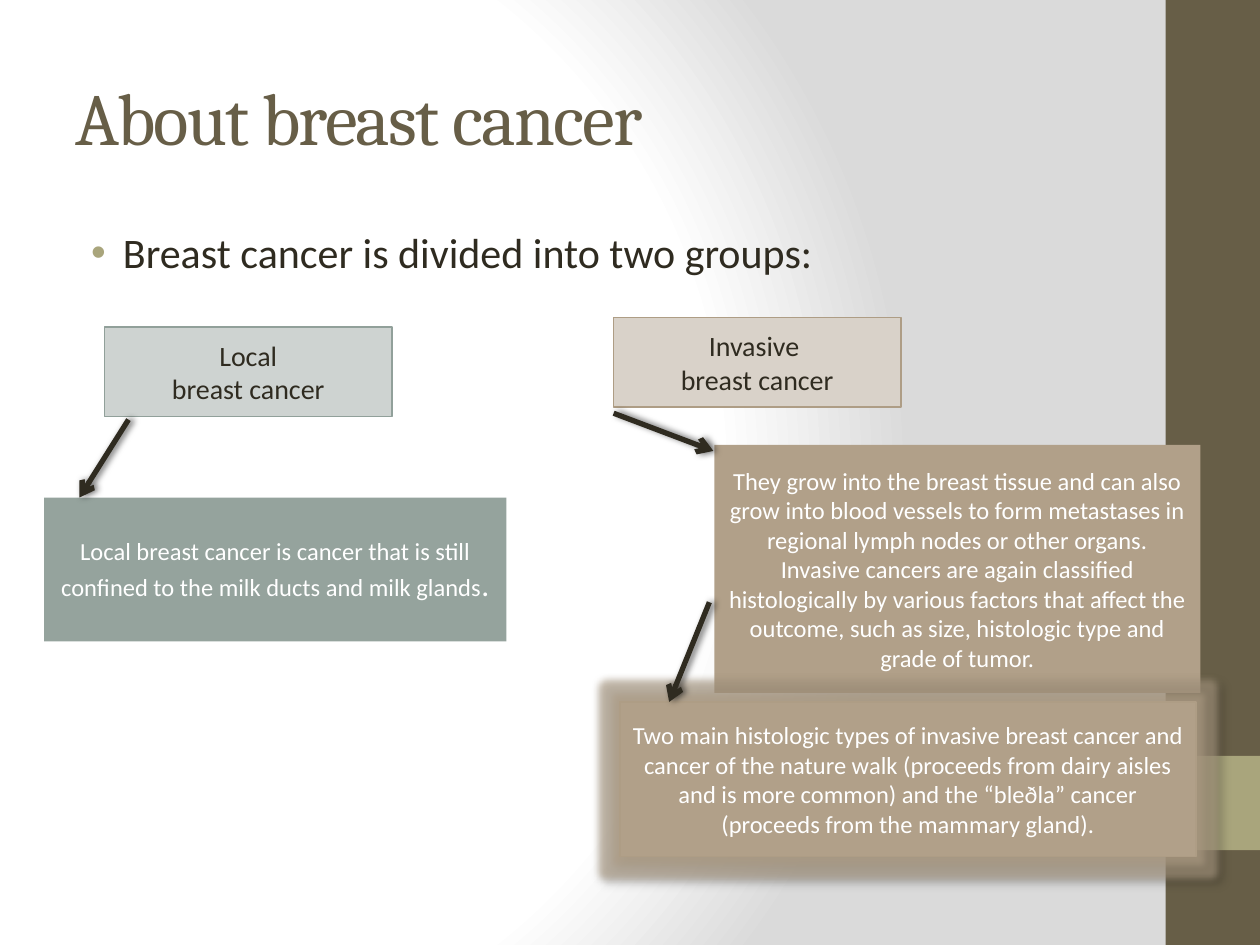
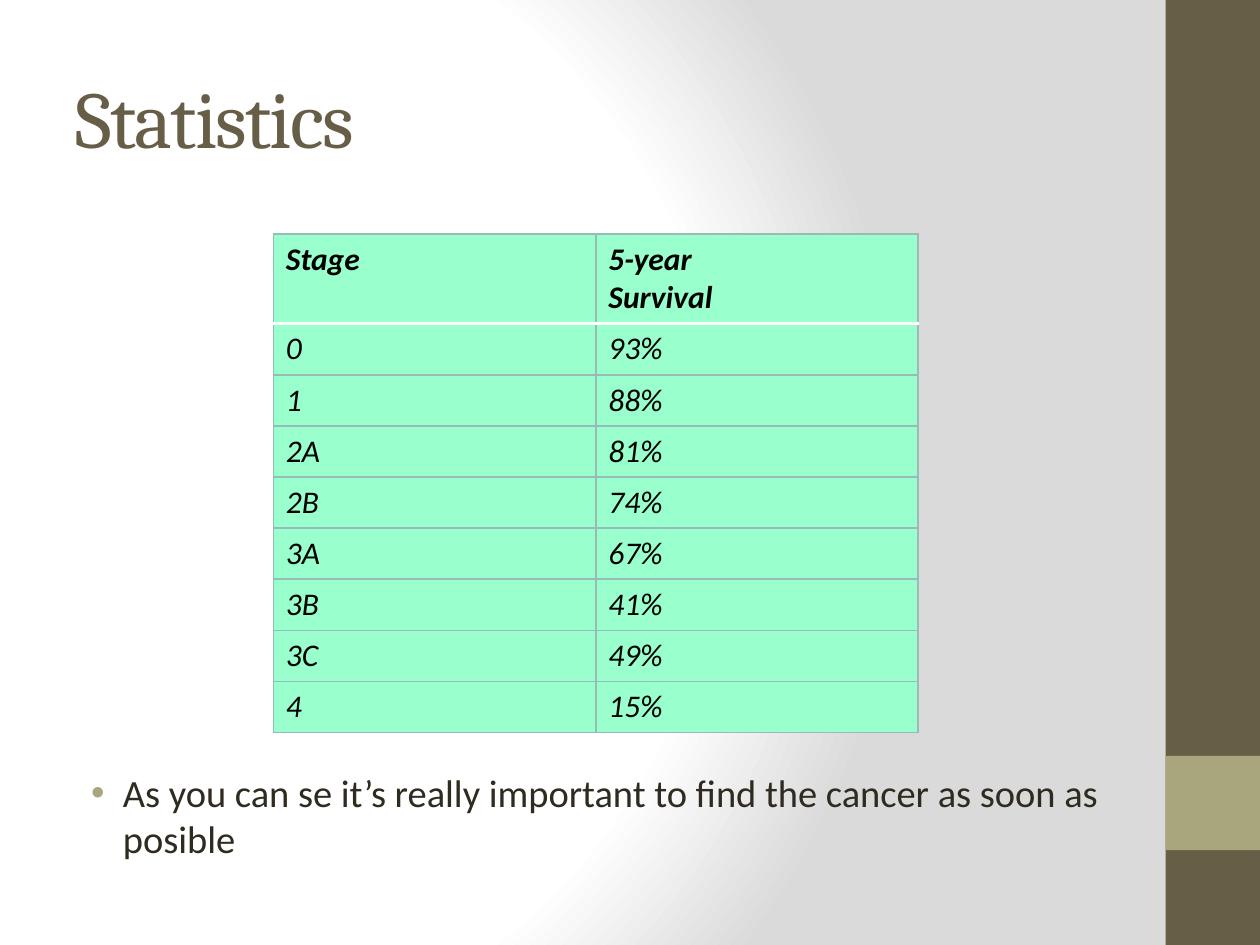
from lxml.etree import SubElement
from pptx import Presentation
from pptx.dml.color import RGBColor
from pptx.enum.shapes import MSO_CONNECTOR, MSO_SHAPE
from pptx.enum.text import MSO_ANCHOR as Anchor, MSO_AUTO_SIZE, PP_ALIGN as Align
from pptx.oxml import parse_xml
from pptx.oxml.ns import nsdecls, qn
from pptx.util import Cm, Pt

BROWN, OLIVE, INK, WHITE = "675E47", "A9A57C", "2F2B20", "FFFFFF"
SAGE, PALE_SAGE, SAGE_LINE = "95A39D", "CED3D1", "91A09A"
TAN, PALE_TAN, TAN_LINE = "B1A089", "D9D2C9", "AE9D85"
MINT, TABLE_LINE = "99FFCC", "98BBBA"
TITLE_FONT, BODY_FONT = "Cambria", "Calibri"
LABEL_SIZE = (5.79, 1.8)
SURVIVAL = [("Stage", "5-year\nSurvival"), ("0", "93%"), ("1", "88%"),
            ("2A", "81%"), ("2B", "74%"), ("3A", "67%"), ("3B", "41%"),
            ("3C", "49%"), ("4", "15%")]


def rgb(value):
    """Turn a hex string into a colour."""
    return RGBColor.from_string(value)


def child(parent, tag, **attributes):
    """Add a drawing element with the given attributes."""
    return SubElement(parent, qn(f"a:{tag}"),
                      {name: str(value) for name, value in attributes.items()})


def tint(parent, color, alpha=100):
    """Add a colour with an opacity in percent."""
    child(child(parent, "srgbClr", val=color), "alpha", val=alpha * 1000)


def write(para, text, size=14, color=INK, font=BODY_FONT, align=Align.LEFT,
          bold=False, italic=False, tracking=0):
    """Append text to a paragraph, with a line break at each newline."""
    para.alignment = align
    for index, line in enumerate(text.split("\n")):
        if index:
            para.add_line_break()
        span = para.add_run()
        span.text = line
        span.font.size, span.font.name = Pt(size), font
        span.font.bold, span.font.italic = bold, italic
        span.font.color.rgb = rgb(color)
        if tracking:
            span.font._element.set("spc", str(tracking * 100))


def add_effects(shape, alpha, distance, angle, glow=None):
    """Give a shape a soft black shadow and, if asked, a glow."""
    properties = shape._element.spPr
    for old in properties.findall(qn("a:effectLst")):
        properties.remove(old)
    effects = child(properties, "effectLst")
    if glow:
        tint(child(effects, "glow", rad=Pt(8)), glow, 60)
    shadow = child(effects, "outerShdw", blurRad=Pt(4), dist=Pt(distance),
                   dir=angle * 60000, algn="ctr", rotWithShape=0)
    tint(shadow, "000000", alpha)


def add_box(page, box, fill, line=None):
    """Add a flat rectangle, outlined if a line colour is given."""
    shape = page.shapes.add_shape(MSO_SHAPE.RECTANGLE, *map(Cm, box))
    shape.shadow.inherit = False
    shape.fill.solid()
    shape.fill.fore_color.rgb = rgb(fill)
    if line:
        shape.line.color.rgb = rgb(line)
        shape.line.width = Pt(1)
    else:
        shape.line.fill.background()
    return shape


def add_card(page, box, paragraphs, fill, line=None, size=14, color=WHITE):
    """Add a rectangle with centred paragraphs."""
    shape = add_box(page, box, fill, line)
    frame = shape.text_frame
    frame.word_wrap, frame.vertical_anchor = True, Anchor.MIDDLE
    for index, text in enumerate(paragraphs):
        para = frame.add_paragraph() if index else frame.paragraphs[0]
        write(para, text, size=size, color=color, align=Align.CENTER)
    return shape


def add_label(page, left, top, paragraphs, fill, line):
    """Add the heading card of a cancer group."""
    add_card(page, (left, top, *LABEL_SIZE), paragraphs, fill, line, 16, INK)


def add_arrow(page, left, top, start, end):
    """Add an arrow between two points measured from a corner."""
    points = (left + start[0], top + start[1], left + end[0], top + end[1])
    arrow = page.shapes.add_connector(MSO_CONNECTOR.STRAIGHT, *map(Cm, points))
    arrow.line.color.rgb = rgb(INK)
    arrow.line.width = Pt(3)
    child(arrow.line._get_or_add_ln(), "tailEnd", type="arrow")
    add_effects(arrow, 60, 2, 0)


def add_bullet(page, box, text, size):
    """Add a bulleted sentence."""
    frame = page.shapes.add_textbox(*map(Cm, box)).text_frame
    frame.word_wrap = True
    para = frame.paragraphs[0]
    write(para, text, size=size)
    properties = para._p.get_or_add_pPr()
    properties.set("marL", str(Cm(0.96)))
    properties.set("indent", str(Cm(-0.64)))
    tint(child(properties, "buClr"), OLIVE)
    child(properties, "buFont", typeface="Arial")
    child(properties, "buChar", char="•")


def set_background(deck):
    """Put the radial white to grey gradient on the master."""
    slide = deck.slide_master.element.cSld
    for old in slide.findall(qn("p:bg")):
        slide.remove(old)
    stops = "".join(f'<a:gs pos="{place}"><a:srgbClr val="{color}"/></a:gs>' for place, color
                    in ((0, WHITE), (75000, WHITE), (100000, "DADADA")))
    slide.insert(0, parse_xml(
        f'<p:bg {nsdecls("p", "a")}><p:bgPr><a:gradFill rotWithShape="1">'
        f'<a:gsLst>{stops}</a:gsLst><a:path path="circle">'
        '<a:fillToRect l="20000" t="50000" r="100000" b="50000"/></a:path>'
        '</a:gradFill><a:effectLst/></p:bgPr></p:bg>'))


def new_page(deck, title, size):
    """Add a page with its side bands and title."""
    page = deck.slides.add_slide(deck.slide_layouts[5])
    add_box(page, (23.5, 0, 1.9, 19.05), BROWN)
    add_box(page, (23.5, 15.24, 1.9, 1.9), OLIVE)
    holder = page.shapes.title
    holder.left, holder.top, holder.width, holder.height = map(Cm, (1.27, 0.76, 21.16, 3.18))
    frame = holder.text_frame
    frame.auto_size, frame.vertical_anchor = MSO_AUTO_SIZE.NONE, Anchor.MIDDLE
    write(frame.paragraphs[0], title, size=size, color=BROWN, font=TITLE_FONT, tracking=-1)
    return page


def add_local_group(page, left, top):
    """Draw the local cancer label and its explanation."""
    add_label(page, left + 1.22, top, ["Local", "breast cancer"], PALE_SAGE, SAGE_LINE)
    card = add_card(page, (left, top + 3.43, 9.32, 2.9),
                    ["Local breast cancer is cancer that is still "
                     "confined to the milk ducts and milk glands"], SAGE)
    write(card.text_frame.paragraphs[0], ".", size=18, color=WHITE, align=Align.CENTER)
    add_arrow(page, left, top, (1.7, 1.86), (0.71, 3.43))


def add_invasive_group(page, left, top):
    """Draw the invasive cancer label and its two explanations."""
    add_label(page, left, top, ["Invasive ", "breast cancer"], PALE_TAN, TAN_LINE)
    add_card(page, (left + 2.03, top + 2.57, 9.8, 5),
             ["They grow into the breast tissue and can also grow into blood vessels "
              "to form metastases in regional lymph nodes or other organs. Invasive "
              "cancers are again classified histologically by various factors that "
              "affect the outcome, such as size, histologic type and grade of tumor."], TAN)
    types = add_card(page, (left + 0.13, top + 7.75, 11.61, 3.12),
                     ["Two main histologic types of invasive breast cancer and cancer of "
                      "the nature walk (proceeds from dairy aisles and is more common) and "
                      "the “bleðla” cancer (proceeds from the mammary gland)."], TAN, TAN_LINE)
    add_effects(types, 40, 3, 45, glow=TAN_LINE)
    add_arrow(page, left, top, (0, 1.93), (2.01, 2.69))
    add_arrow(page, left, top, (1.93, 5.74), (1.12, 7.75))


def set_border(cell, side, color, width):
    """Draw one edge of a table cell."""
    edge = child(cell._tc.get_or_add_tcPr(), f"ln{side}", w=Pt(width))
    tint(child(edge, "solidFill"), color)


def add_survival_table(page, left, top, width):
    """Draw the table of survival by stage."""
    table = page.shapes.add_table(len(SURVIVAL), 2, Cm(left), Cm(top),
                                  Cm(width), Cm(10)).table
    for column in table.columns:
        column.width = Cm(width / 2)
    for row, values in enumerate(SURVIVAL):
        table.rows[row].height = Cm(1.03 if row else 1.79)
        for column, text in enumerate(values):
            cell = table.cell(row, column)
            for side in "LRTB":
                divider = (row, side) in ((0, "B"), (1, "T"))
                set_border(cell, side, *((WHITE, 2) if divider else (TABLE_LINE, 1)))
            cell.fill.solid()
            cell.fill.fore_color.rgb = rgb(MINT)
            write(cell.text_frame.paragraphs[0], text, size=18, color="000000",
                  bold=row == 0, italic=True)


def build_about(deck):
    """Build the page on the two groups of breast cancer."""
    page = new_page(deck, "About breast cancer", 42)
    add_bullet(page, (1.27, 4.45, 21.16, 1.3), "Breast cancer is divided into two groups:", 24)
    add_local_group(page, 0.89, 6.6)
    add_invasive_group(page, 12.37, 6.4)


def build_statistics(deck):
    """Build the page on survival."""
    page = new_page(deck, "Statistics", 46)
    add_survival_table(page, 5.51, 4.72, 13)
    add_bullet(page, (1.27, 15.37, 21.16, 2.2),
               "As you can se it’s really important to find the cancer as soon as posible", 22)


def main():
    """Build and save the deck."""
    deck = Presentation()
    deck.slide_width, deck.slide_height = Cm(25.4), Cm(19.05)
    set_background(deck)
    build_about(deck)
    build_statistics(deck)
    deck.save("out.pptx")


if __name__ == "__main__":
    main()
